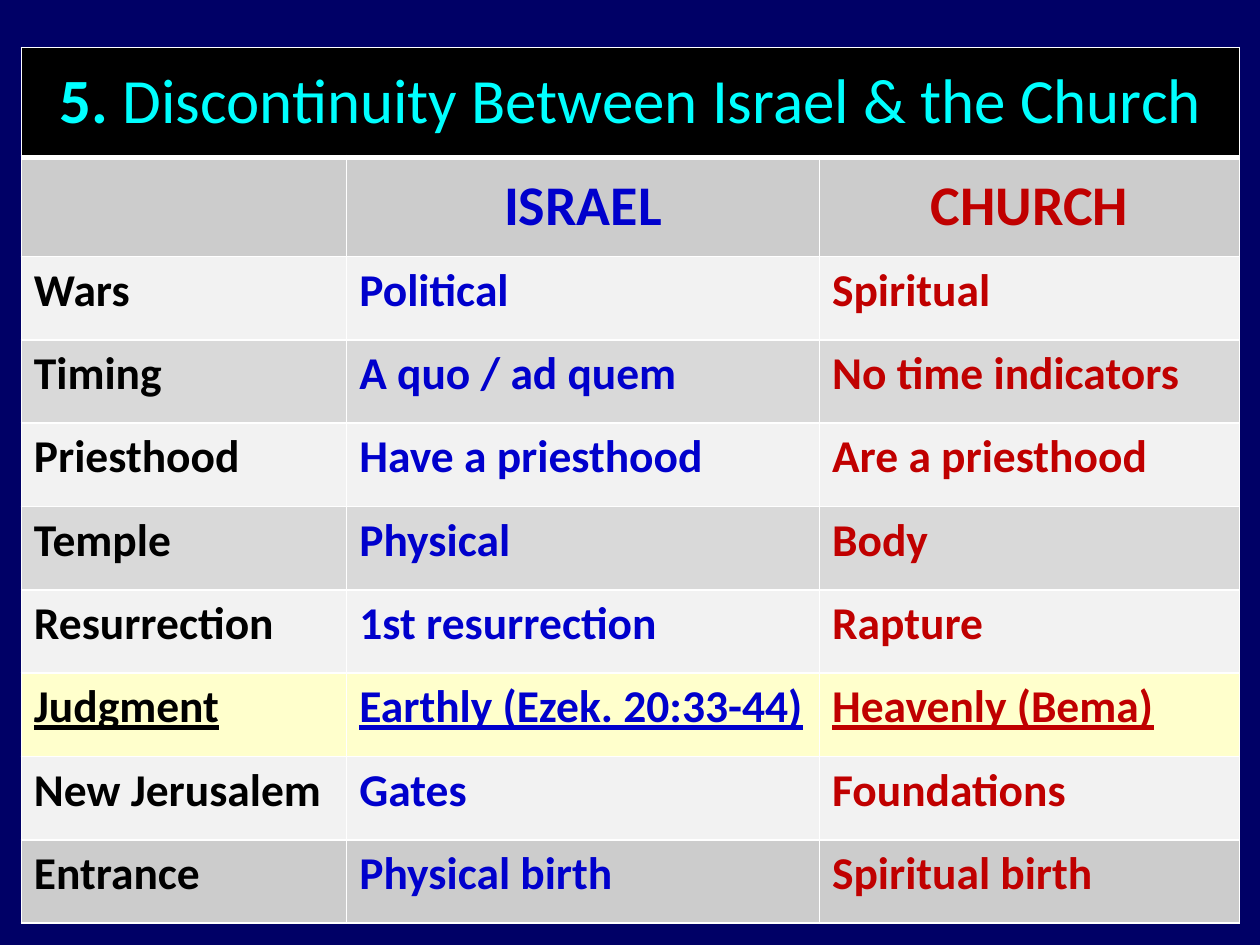
from dataclasses import dataclass
from lxml import etree
from pptx import Presentation
from pptx.dml.color import RGBColor
from pptx.enum.text import MSO_ANCHOR, PP_ALIGN
from pptx.oxml.ns import qn
from pptx.table import Table, _Cell
from pptx.util import Cm, Pt

MIDDLE = MSO_ANCHOR.MIDDLE
CENTER = PP_ALIGN.CENTER
FONT = "Calibri"
NAVY, BLACK, WHITE, CYAN = "000066", "000000", "FFFFFF", "00FFFF"
INKS = (BLACK, "0000CC", "C00000")
GREY, LIGHT, MID, YELLOW = "CCCCCC", "F2F2F2", "D9D9D9", "FFFFCC"
WIDTHS = (6.56, 9.53, 8.47)
TITLE_H, HEAD_H, ROW_H = 2.21, 2.0, 1.68


@dataclass
class Row:
    texts: tuple[str, str, str]
    fill: str
    under: bool = False


HEAD = Row(("", "ISRAEL", "CHURCH"), GREY)
ROWS = [
    Row(("Wars", "Political", "Spiritual"), LIGHT),
    Row(("Timing", "A quo / ad quem", "No time indicators"), MID),
    Row(("Priesthood", "Have a priesthood", "Are a priesthood"), LIGHT),
    Row(("Temple", "Physical", "Body"), MID),
    Row(("Resurrection", "1st resurrection", "Rapture"), LIGHT),
    Row(("Judgment", "Earthly (Ezek. 20:33-44)", "Heavenly (Bema)"), YELLOW, True),
    Row(("New Jerusalem", "Gates", "Foundations"), LIGHT),
    Row(("Entrance", "Physical birth", "Spiritual birth"), GREY),
]


def color(code: str) -> RGBColor:
    return RGBColor.from_string(code)


def paint(cell: _Cell, fill: str, top: float = 1, base: float = 1) -> None:
    cell.fill.solid()
    cell.fill.fore_color.rgb = color(fill)
    props = cell._tc.get_or_add_tcPr()
    sides = {"a:lnL": 1, "a:lnR": 1, "a:lnT": top, "a:lnB": base}
    for spot, (tag, width) in enumerate(sides.items()):
        line = etree.Element(qn(tag), w=str(Pt(width)))
        solid = etree.SubElement(line, qn("a:solidFill"))
        etree.SubElement(solid, qn("a:srgbClr"), val=WHITE)
        props.insert(spot, line)


def style(cell: _Cell, size: int, ink: str, under: bool = False) -> None:
    for run in cell.text_frame.paragraphs[0].runs:
        font = run.font
        font.name, font.size, font.bold = FONT, Pt(size), True
        font.color.rgb = color(ink)
        if under:
            font.underline = True


def center(cell: _Cell, size: int) -> None:
    cell.vertical_anchor = MIDDLE
    para = cell.text_frame.paragraphs[0]
    para.alignment = CENTER
    para.space_before = Pt(size * 0.2)


def draw_title(table: Table) -> None:
    for col in range(len(WIDTHS)):
        paint(table.cell(0, col), BLACK, base=3)
    cell = table.cell(0, 0)
    cell.merge(table.cell(0, len(WIDTHS) - 1))
    para = cell.text_frame.paragraphs[0]
    para.text = "5. "
    para.add_run().text = "Discontinuity Between Israel & the Church"
    center(cell, 36)
    style(cell, 36, CYAN)
    para.runs[1].font.bold = False


def draw_head(table: Table) -> None:
    for col, text in enumerate(HEAD.texts):
        cell = table.cell(1, col)
        paint(cell, HEAD.fill, top=3)
        cell.text_frame.text = text
        center(cell, 32)
        style(cell, 32, INKS[col])


def draw_row(table: Table, index: int, row: Row) -> None:
    for col, text in enumerate(row.texts):
        cell = table.cell(index, col)
        paint(cell, row.fill)
        cell.text_frame.text = text
        para = cell.text_frame.paragraphs[0]
        para.space_before = para.space_after = Pt(6)
        style(cell, 26, INKS[col], row.under)


def main() -> None:
    """Build the slide comparing Israel and the Church."""
    deck = Presentation()
    deck.slide_width, deck.slide_height = Cm(25.4), Cm(19.05)
    slide = deck.slides.add_slide(deck.slide_layouts[6])
    back = slide.background.fill
    back.solid()
    back.fore_color.rgb = color(NAVY)

    highs = [TITLE_H, HEAD_H] + [ROW_H] * len(ROWS)
    frame = slide.shapes.add_table(
        len(highs), len(WIDTHS), Cm(0.43), Cm(0.96), Cm(sum(WIDTHS)), Cm(sum(highs))
    )
    table = frame.table
    for col, width in zip(table.columns, WIDTHS):
        col.width = Cm(width)
    for line, high in zip(table.rows, highs):
        line.height = Cm(high)

    draw_title(table)
    draw_head(table)
    for index, row in enumerate(ROWS, 2):
        draw_row(table, index, row)
    deck.save("out.pptx")


if __name__ == "__main__":
    main()
